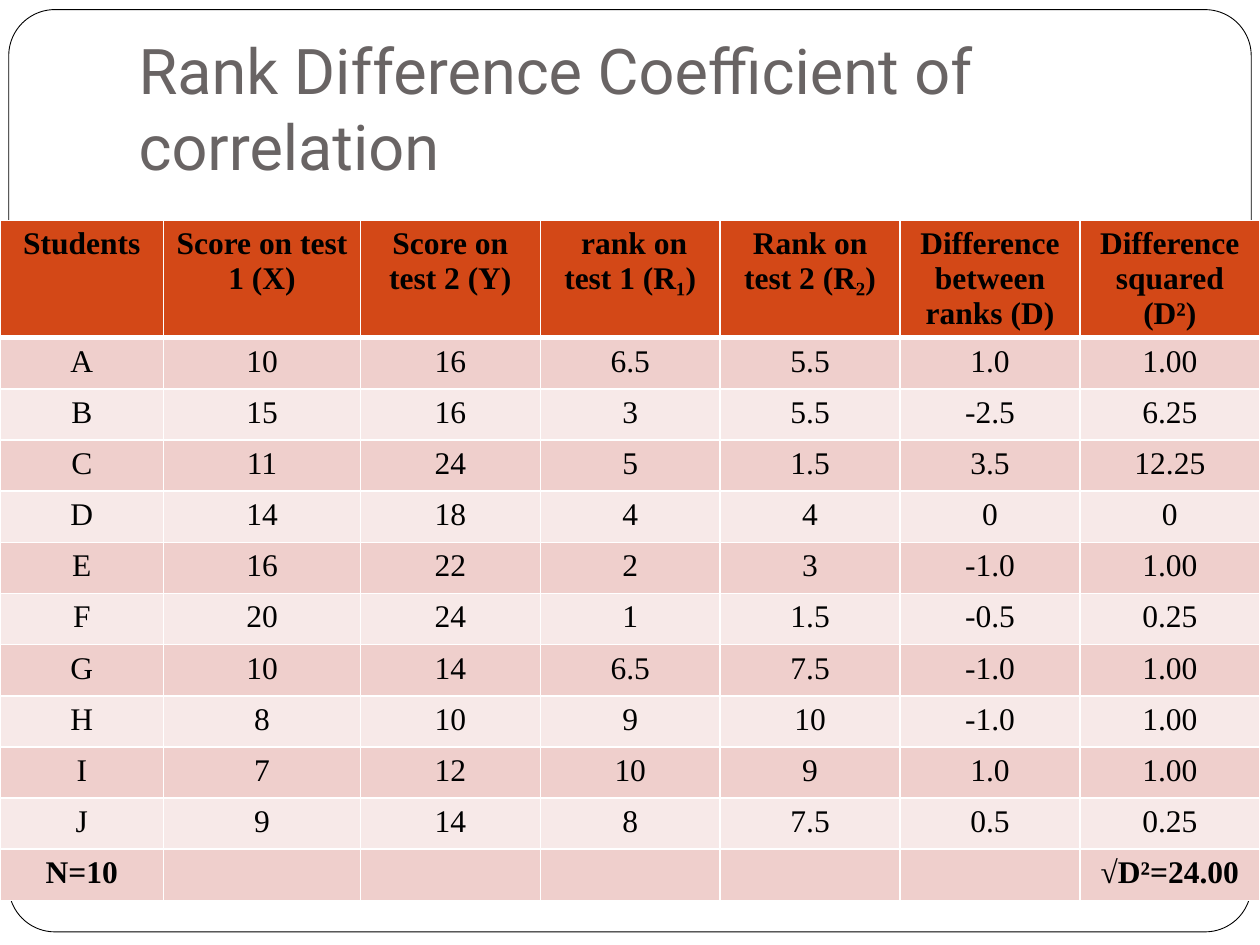
from dataclasses import dataclass

from lxml.etree import SubElement
from pptx import Presentation
from pptx.dml.color import RGBColor
from pptx.enum.shapes import MSO_SHAPE
from pptx.enum.text import MSO_ANCHOR, MSO_AUTO_SIZE, PP_ALIGN
from pptx.oxml.ns import qn
from pptx.util import Pt


@dataclass(frozen=True)
class Theme:
    title_font: str = "Roboto"
    table_font: str = "Times New Roman"
    title_size: int = 36
    table_size: int = 18
    title: str = "696464"
    text: str = "000000"
    paper: str = "FFFFFF"
    header: str = "D34817"
    bands: tuple = ("EFCFCC", "F7E9E8")


THEME = Theme()

HEADINGS = ("Students", "Score on test 1 (X)", "Score on test 2 (Y)",
            " rank on test 1 (R₁)", "Rank on test 2 (R₂)",
            "Difference between ranks (D)", "Difference squared (D²)")
SCORES = (
    ("A", "10", "16", "6.5", "5.5", "1.0", "1.00"),
    ("B", "15", "16", "3", "5.5", "-2.5", "6.25"),
    ("C", "11", "24", "5", "1.5", "3.5", "12.25"),
    ("D", "14", "18", "4", "4", "0", "0"),
    ("E", "16", "22", "2", "3", "-1.0", "1.00"),
    ("F", "20", "24", "1", "1.5", "-0.5", "0.25"),
    ("G", "10", "14", "6.5", "7.5", "-1.0", "1.00"),
    ("H", "8", "10", "9", "10", "-1.0", "1.00"),
    ("I", "7", "12", "10", "9", "1.0", "1.00"),
    ("J", "9", "14", "8", "7.5", "0.5", "0.25"),
)
TOTALS = ("N=10", "", "", "", "", "", "√D²=24.00")


def color(value):
    return RGBColor.from_string(value)


def set_font(p, name, size, rgb, bold=False):
    p.font.name = name
    p.font.size = Pt(size)
    p.font.color.rgb = color(rgb)
    p.font.bold = bold


def add_title(s, text):
    sp = s.shapes.title
    sp.left, sp.top, sp.width, sp.height = Pt(72), Pt(21.6), Pt(612), Pt(90)
    tf = sp.text_frame
    tf.text = text
    tf.word_wrap = True
    tf.auto_size = MSO_AUTO_SIZE.NONE
    tf.vertical_anchor = MSO_ANCHOR.BOTTOM
    tf.margin_left = tf.margin_right = tf.margin_bottom = Pt(7.2)
    tf.margin_top = Pt(3.6)
    p = tf.paragraphs[0]
    p.alignment = PP_ALIGN.LEFT
    p.line_spacing = 1.0
    set_font(p, THEME.title_font, THEME.title_size, THEME.title)


def add_frame(s):
    sp = s.shapes.add_shape(MSO_SHAPE.ROUNDED_RECTANGLE,
                            Pt(5), Pt(5.5), Pt(710), Pt(527))
    sp.adjustments[0] = 0.05
    sp.shadow.inherit = False
    sp.fill.solid()
    sp.fill.fore_color.rgb = color(THEME.paper)
    sp.line.color.rgb = color(THEME.text)
    sp.line.width = Pt(0.5)
    # The frame lies behind the title
    s.shapes.title.element.addprevious(sp.element)


def set_borders(cell, widths):
    tc_pr = cell._tc.get_or_add_tcPr()
    for i, (side, width) in enumerate(widths.items()):
        ln = SubElement(tc_pr, qn(f"a:{side}"), w=str(Pt(width)))
        fill = SubElement(ln, qn("a:solidFill"))
        SubElement(fill, qn("a:srgbClr"), val=THEME.paper)
        tc_pr.insert(i, ln)


def format_cell(cell, text, fill, bold, top, bottom):
    cell.text = text
    cell.fill.solid()
    cell.fill.fore_color.rgb = color(fill)
    p = cell.text_frame.paragraphs[0]
    p.alignment = PP_ALIGN.CENTER
    set_font(p, THEME.table_font, THEME.table_size, THEME.text, bold)
    set_borders(cell, {"lnL": 1, "lnR": 1, "lnT": top, "lnB": bottom})


def add_rank_table(s):
    rows = (HEADINGS, *SCORES, TOTALS)
    widths = [93.5, 112.5] + [102.8] * 5
    heights = [66] + [29.25] * (len(rows) - 1)
    table = s.shapes.add_table(len(rows), len(widths), Pt(0), Pt(126),
                               Pt(sum(widths)), Pt(sum(heights))).table
    for column, width in zip(table.columns, widths):
        column.width = Pt(width)
    for i, (values, height) in enumerate(zip(rows, heights)):
        table.rows[i].height = Pt(height)
        fill = THEME.bands[(i - 1) % 2] if i else THEME.header
        bold = values in (HEADINGS, TOTALS)
        top, bottom = 3 if i == 1 else 1, 3 if i == 0 else 1
        for j, text in enumerate(values):
            format_cell(table.cell(i, j), text, fill, bold, top, bottom)


def main():
    prs = Presentation()
    prs.slide_width, prs.slide_height = Pt(720), Pt(540)
    s = prs.slides.add_slide(prs.slide_layouts[5])  # Title Only

    # Title on a rounded frame
    add_title(s, "Rank Difference Coefficient of correlation")
    add_frame(s)

    # Scores, ranks and differences
    add_rank_table(s)

    prs.save("out.pptx")


if __name__ == "__main__":
    main()
